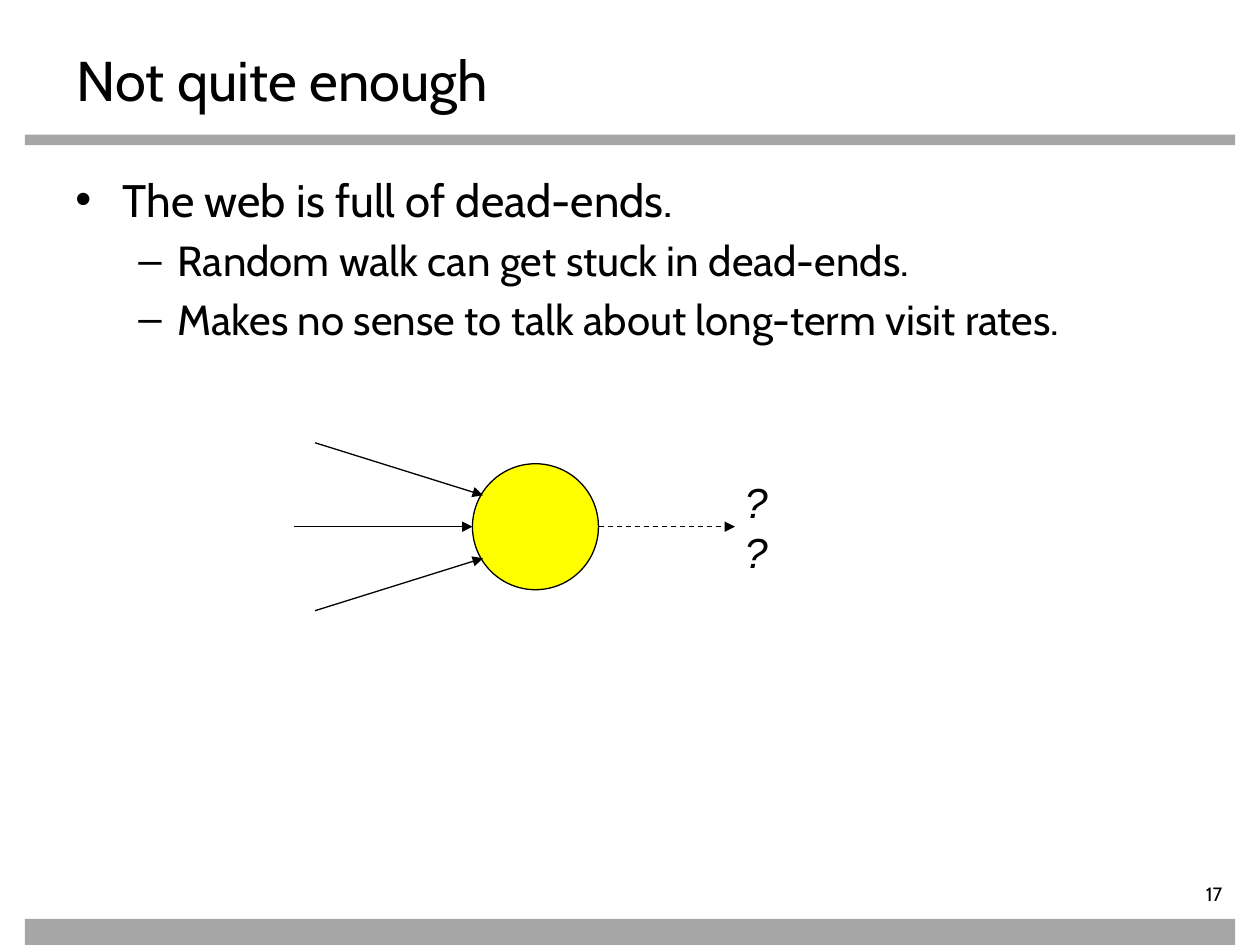
from dataclasses import dataclass

from lxml import etree
from pptx import Presentation
from pptx.dml.color import RGBColor
from pptx.enum.dml import MSO_LINE
from pptx.enum.shapes import MSO_CONNECTOR, MSO_SHAPE
from pptx.enum.text import MSO_ANCHOR, PP_ALIGN
from pptx.oxml.ns import qn
from pptx.util import Pt

RECTANGLE, OVAL = MSO_SHAPE.RECTANGLE, MSO_SHAPE.OVAL
STRAIGHT, DASH = MSO_CONNECTOR.STRAIGHT, MSO_LINE.DASH
TOP, MIDDLE = MSO_ANCHOR.TOP, MSO_ANCHOR.MIDDLE
LEFT, CENTER, RIGHT = PP_ALIGN.LEFT, PP_ALIGN.CENTER, PP_ALIGN.RIGHT


@dataclass(frozen=True)
class Theme:
    ink: RGBColor = RGBColor(0x00, 0x00, 0x00)
    bar: RGBColor = RGBColor(0xA6, 0xA6, 0xA6)
    node: RGBColor = RGBColor(0xFF, 0xFF, 0x00)
    font: str = "Cabin"
    symbol_font: str = "Arial"
    title: float = 32
    point: float = 26
    subpoint: float = 24
    page: float = 11
    line: float = 0.75


THEME = Theme()

# Level: bullet, left margin, hanging indent, type size
LEVELS = (
    ("•", 27, -27, THEME.point),
    ("–", 58.5, -22.5, THEME.subpoint),
)
POINTS = (
    (0, "The web is full of dead-ends."),
    (1, "Random walk can get stuck in dead-ends."),
    (1, "Makes no sense to talk about long-term visit rates."),
)


def add_filled_shape(slide, kind, box, fill, outline=None):
    shape = slide.shapes.add_shape(kind, *map(Pt, box))
    shape.shadow.inherit = False
    shape.fill.solid()
    shape.fill.fore_color.rgb = fill
    if outline is None:
        shape.line.fill.background()
    else:
        shape.line.color.rgb = outline
        shape.line.width = Pt(THEME.line)


def add_text_frame(slide, box, margins=(7.2, 3.6, 7.2, 3.6), anchor=TOP):
    frame = slide.shapes.add_textbox(*map(Pt, box)).text_frame
    frame.word_wrap = True
    frame.vertical_anchor = anchor
    (frame.margin_left, frame.margin_top,
     frame.margin_right, frame.margin_bottom) = map(Pt, margins)
    return frame


def format_paragraph(paragraph, size, font=THEME.font, align=LEFT, italic=False):
    paragraph.alignment = align
    for run in paragraph.runs:
        run.font.name = font
        run.font.size = Pt(size)
        run.font.italic = italic
        run.font.color.rgb = THEME.ink


def add_label(slide, text, box, size, font=THEME.font, align=LEFT,
              italic=False, **frame_options):
    frame = add_text_frame(slide, box, **frame_options)
    frame.text = text
    format_paragraph(frame.paragraphs[0], size, font, align, italic)


def set_bullet(paragraph, character, margin, indent):
    properties = paragraph._p.get_or_add_pPr()
    properties.set("marL", str(Pt(margin)))
    properties.set("indent", str(Pt(indent)))
    etree.SubElement(properties, qn("a:buFont"), typeface=THEME.symbol_font)
    etree.SubElement(properties, qn("a:buChar"), char=character)


def add_bullet_list(slide, box, points):
    frame = add_text_frame(slide, box)
    for index, (level, text) in enumerate(points):
        paragraph = frame.add_paragraph() if index else frame.paragraphs[0]
        paragraph.text = text
        paragraph.level = level
        bullet, margin, indent, size = LEVELS[level]
        paragraph.space_before = Pt(0.2 * size if index else 0)
        set_bullet(paragraph, bullet, margin, indent)
        format_paragraph(paragraph, size)


def add_arrow(slide, start, end, dash=None):
    arrow = slide.shapes.add_connector(STRAIGHT, *map(Pt, (*start, *end)))
    arrow.line.color.rgb = THEME.ink
    arrow.line.width = Pt(THEME.line)
    if dash is not None:
        arrow.line.dash_style = dash
    etree.SubElement(arrow.line._get_or_add_ln(), qn("a:tailEnd"), type="triangle")
    etree.SubElement(arrow._element.spPr, qn("a:effectLst"))


def add_dead_end_diagram(slide):
    center_x, center_y, radius = 306, 301, 36
    add_filled_shape(slide, OVAL,
                     (center_x - radius, center_y - radius, 2 * radius, 2 * radius),
                     THEME.node, THEME.ink)
    # Links into the page, mirrored about the middle one
    for side in (1, -1):
        add_arrow(slide, (180, center_y + 48 * side), (276, center_y + 18 * side))
    add_arrow(slide, (168, center_y), (center_x - radius, center_y))
    # No known way out
    add_arrow(slide, (center_x + radius, center_y), (420, center_y), DASH)
    add_label(slide, "??", (414, center_y - 18, 36, 36), THEME.subpoint,
              THEME.symbol_font, CENTER, italic=True, anchor=MIDDLE)


def main():
    presentation = Presentation()
    presentation.slide_width, presentation.slide_height = Pt(720), Pt(540)
    slide = presentation.slides.add_slide(presentation.slide_layouts[6])

    # Header and footer bars
    for top, height in ((77, 6), (525, 15)):
        add_filled_shape(slide, RECTANGLE, (14.2, top, 691.6, height), THEME.bar)

    # Title and points
    add_label(slide, "Not quite enough", (36.7, 20, 648, 40), THEME.title,
              margins=(7.2, 6, 7.2, 0))
    add_bullet_list(slide, (36, 94.5, 648, 391), POINTS)

    add_dead_end_diagram(slide)

    # Page number
    add_label(slide, "17", (626.4, 504, 79.2, 15.8), THEME.page, align=RIGHT,
              margins=(0, 0, 7.2, 0))

    presentation.save("out.pptx")


if __name__ == "__main__":
    main()
